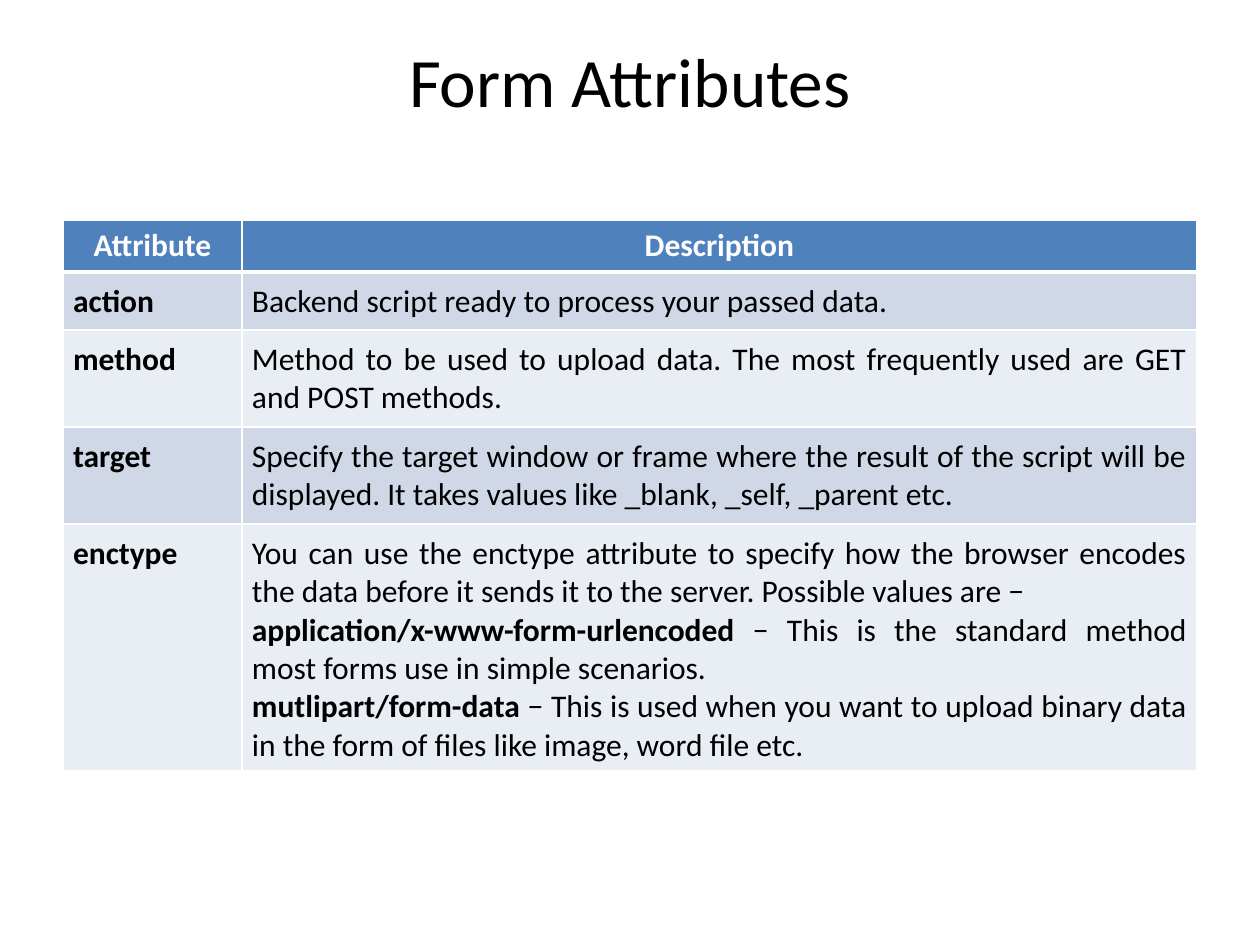
from dataclasses import dataclass

from pptx import Presentation
from pptx.dml.color import RGBColor
from pptx.enum.text import MSO_ANCHOR, PP_ALIGN
from pptx.oxml import parse_xml
from pptx.oxml.ns import nsdecls
from pptx.util import Inches, Pt


@dataclass(frozen=True)
class Theme:
    font: str = "Calibri"
    ink: str = "000000"
    white: str = "FFFFFF"
    head: str = "4F81BD"
    bands: tuple = ("D0D8E8", "E9EDF4")
    title: float = 39.6
    body: float = 18
    thin: float = 1
    thick: float = 3


THEME = Theme()
COLS = (1.42, 7.58)
HEIGHTS = (0.41, 0.46, 0.77, 0.77, 1.96)
HEAD = ("Attribute", "Description")

# A cell is a list of paragraphs; a paragraph is a list of (text, bold) runs.
ROWS = [
    ("action", [[("Backend script ready to process your passed data.", False)]]),
    ("method", [[("Method to be used to upload data. The most frequently used "
                  "are GET and POST methods.", False)]]),
    ("target", [[("Specify the target window or frame where the result of the "
                  "script will be displayed. It takes values like _blank, "
                  "_self, _parent etc.", False)]]),
    ("enctype", [
        [("You can use the enctype attribute to specify how the browser encodes "
          "the data before it sends it to the server. Possible values are −", False)],
        [("application/x-www-form-urlencoded", True),
         (" − This is the standard method most forms use in simple scenarios.", False)],
        [("mutlipart/form-data", True),
         (" − This is used when you want to upload binary data in the form of "
          "files like image, word file etc.", False)],
    ]),
]


def assign(item, values):
    for name, value in values.items():
        setattr(item, name, value)


def write(frame, paras, size, color, align):
    for i, runs in enumerate(paras):
        para = frame.paragraphs[0] if i == 0 else frame.add_paragraph()
        para.alignment = align
        for text, bold in runs:
            run = para.add_run()
            run.text = text
            assign(run.font, {"name": THEME.font, "size": Pt(size), "bold": bold})
            run.font.color.rgb = RGBColor.from_string(color)


def add_title(slide, text):
    box = slide.shapes.add_textbox(Inches(0.5), Inches(0.3), Inches(9), Inches(1.25))
    assign(box.text_frame, {"word_wrap": True, "margin_top": 0,
                            "vertical_anchor": MSO_ANCHOR.TOP})
    write(box.text_frame, [[(text, False)]], THEME.title, THEME.ink, PP_ALIGN.CENTER)


def paint(cell, color, top, bottom):
    """Give the cell its fill and its white borders."""
    props = cell._tc.get_or_add_tcPr()
    for side, width in zip("LRTB", (THEME.thin, THEME.thin, top, bottom)):
        props.append(parse_xml(
            f'<a:ln{side} {nsdecls("a")} w="{Pt(width)}"><a:solidFill>'
            f'<a:srgbClr val="{THEME.white}"/></a:solidFill></a:ln{side}>'))
    cell.fill.solid()
    cell.fill.fore_color.rgb = RGBColor.from_string(color)


def add_grid(slide):
    grid = slide.shapes.add_table(
        len(HEIGHTS), len(COLS), Inches(0.5), Inches(1.75),
        Inches(sum(COLS)), Inches(sum(HEIGHTS))).table
    for col, width in zip(grid.columns, COLS):
        col.width = Inches(width)
    for row, height in zip(grid.rows, HEIGHTS):
        row.height = Inches(height)

    for cell, text in zip(grid.rows[0].cells, HEAD):
        write(cell.text_frame, [[(text, True)]], THEME.body, THEME.white,
              PP_ALIGN.CENTER)
        paint(cell, THEME.head, THEME.thin, THEME.thick)

    sides = ("left", "right", "top", "bottom")
    inset = {f"margin_{side}": Inches(0.08) for side in sides}
    for i, (name, paras) in enumerate(ROWS):
        top = THEME.thin if i else THEME.thick
        for cell, content in zip(grid.rows[i + 1].cells, ([[(name, True)]], paras)):
            assign(cell, inset)
            write(cell.text_frame, content, THEME.body, THEME.ink, PP_ALIGN.JUSTIFY)
            paint(cell, THEME.bands[i % 2], top, THEME.thin)


def main():
    deck = Presentation()
    assign(deck, {"slide_width": Inches(10), "slide_height": Inches(7.5)})
    slide = deck.slides.add_slide(deck.slide_layouts[6])
    add_title(slide, "Form Attributes")
    add_grid(slide)
    deck.save("out.pptx")


if __name__ == "__main__":
    main()
